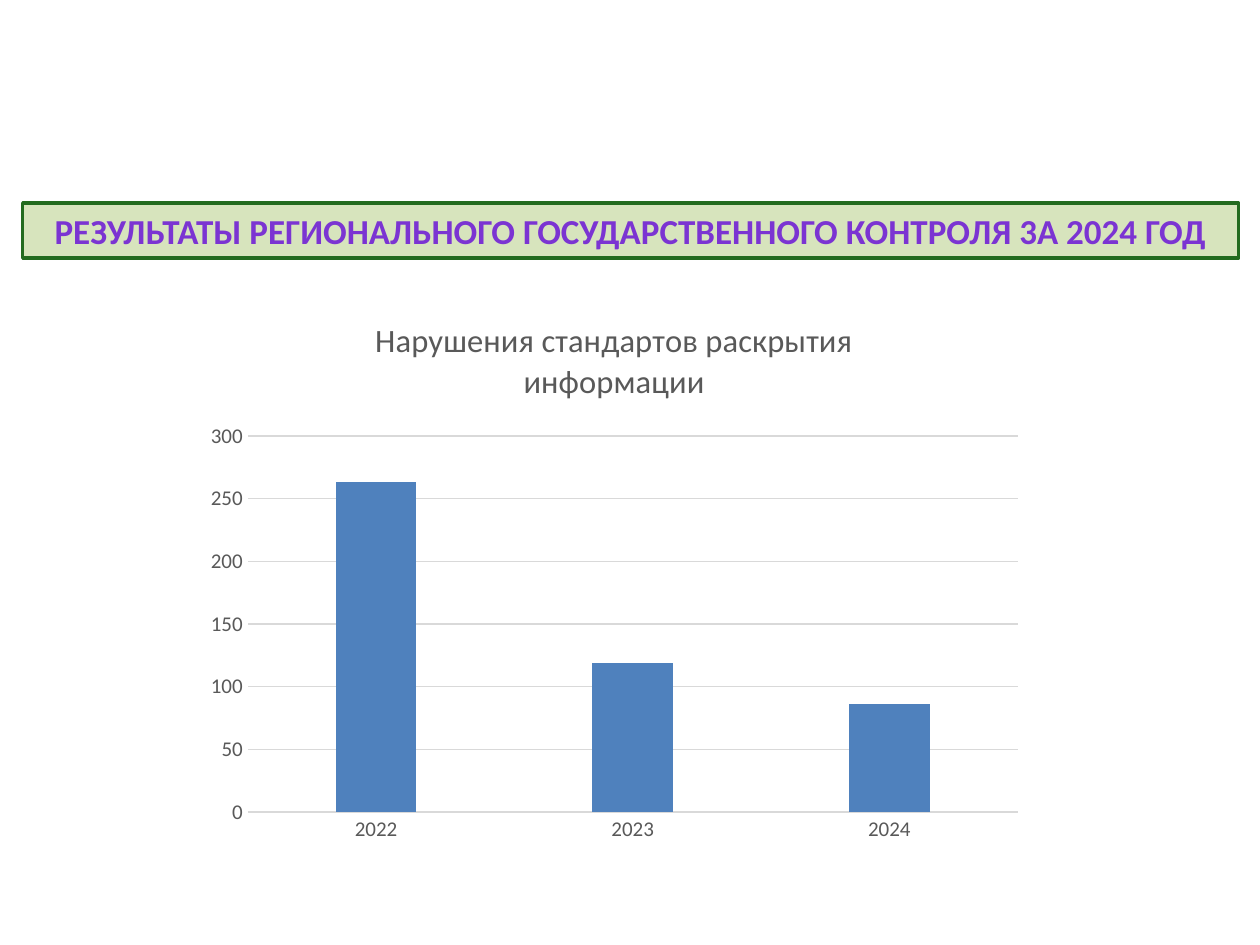
from dataclasses import dataclass

import lxml.etree
import pptx
import pptx.chart.data
import pptx.dml.color
import pptx.enum.chart
import pptx.enum.text
import pptx.oxml
import pptx.oxml.ns
import pptx.util
from pptx.util import Inches


def rgb(code):
    return pptx.dml.color.RGBColor.from_string(code)


@dataclass(frozen=True)
class Theme:
    font: str = "Calibri"
    banner_fill: str = "D7E4BD"
    banner_line: str = "236B1F"
    banner_text: str = "7B34D2"
    chart_text: str = "595959"
    grid: str = "D9D9D9"
    columns: str = "4F81BD"
    banner_size: float = 20
    chart_title_size: float = 18.6
    axis_size: float = 12


THEME = Theme()


def style_font(font, size, color, bold=False):
    font.name = THEME.font
    font.size = pptx.util.Pt(size)
    font.bold = bold
    font.color.rgb = rgb(color)


def style_line(line, color, width):
    line.color.rgb = rgb(color)
    line.width = pptx.util.Pt(width)


def round_corners(placeholder):
    qn = pptx.oxml.ns.qn
    geometry = lxml.etree.Element(qn("a:prstGeom"), prst="roundRect")
    lxml.etree.SubElement(geometry, qn("a:avLst"))
    placeholder._element.spPr.find(qn("a:xfrm")).addnext(geometry)


def place_banner(slide, text, left, top, width, height):
    banner = slide.shapes.title
    banner.left, banner.top, banner.width, banner.height = left, top, width, height
    round_corners(banner)
    banner.fill.solid()
    banner.fill.fore_color.rgb = rgb(THEME.banner_fill)
    style_line(banner.line, THEME.banner_line, 2)
    frame = banner.text_frame
    frame.text = text
    frame.word_wrap = True
    frame.auto_size = pptx.enum.text.MSO_AUTO_SIZE.NONE
    frame.vertical_anchor = pptx.enum.text.MSO_ANCHOR.MIDDLE
    heading = frame.paragraphs[0]
    heading.alignment = pptx.enum.text.PP_ALIGN.CENTER
    style_font(heading.font, THEME.banner_size, THEME.banner_text, bold=True)


def style_axes(chart):
    years, counts = chart.category_axis, chart.value_axis
    for axis in (years, counts):
        axis.major_tick_mark = pptx.enum.chart.XL_TICK_MARK.NONE
        axis.minor_tick_mark = pptx.enum.chart.XL_TICK_MARK.NONE
        style_font(axis.tick_labels.font, THEME.axis_size, THEME.chart_text)
    style_line(years.format.line, THEME.grid, 0.75)
    counts.format.line.fill.background()
    counts.minimum_scale, counts.maximum_scale, counts.major_unit = 0, 300, 50
    style_line(counts.major_gridlines.format.line, THEME.grid, 0.75)


def place_violations(slide, title, violations, left, top, width, height):
    data = pptx.chart.data.CategoryChartData()
    data.categories = list(violations)
    data.add_series("Series 1", list(violations.values()))
    chart = slide.shapes.add_chart(
        pptx.enum.chart.XL_CHART_TYPE.COLUMN_CLUSTERED,
        left, top, width, height, data,
    ).chart
    style_font(chart.font, THEME.axis_size, THEME.chart_text)
    chart.has_legend = False
    chart.has_title = True
    chart.chart_title.include_in_layout = False
    chart.chart_title.text_frame.text = title
    heading = chart.chart_title.text_frame.paragraphs[0]
    style_font(heading.font, THEME.chart_title_size, THEME.chart_text)
    style_axes(chart)
    plot = chart.plots[0]
    plot.vary_by_categories = False
    plot.gap_width = 219
    plot.overlap = -27
    columns = plot.series[0].format.fill
    columns.solid()
    columns.fore_color.rgb = rgb(THEME.columns)


def main():
    presentation = pptx.Presentation()
    presentation.slide_width = Inches(10)
    presentation.slide_height = Inches(7.5)
    title_only = presentation.slide_layouts[5]
    slide = presentation.slides.add_slide(title_only)
    place_banner(
        slide,
        "РЕЗУЛЬТАТЫ РЕГИОНАЛЬНОГО ГОСУДАРСТВЕННОГО КОНТРОЛЯ 3А 2024 ГОД",
        Inches(0.18), Inches(1.61), Inches(9.65), Inches(0.44),
    )
    place_violations(
        slide,
        "Нарушения стандартов раскрытия информации",
        {"2022": 263, "2023": 119, "2024": 86},
        Inches(1.54), Inches(2.33), Inches(6.67), Inches(4.44),
    )
    presentation.save("out.pptx")


if __name__ == "__main__":
    main()
